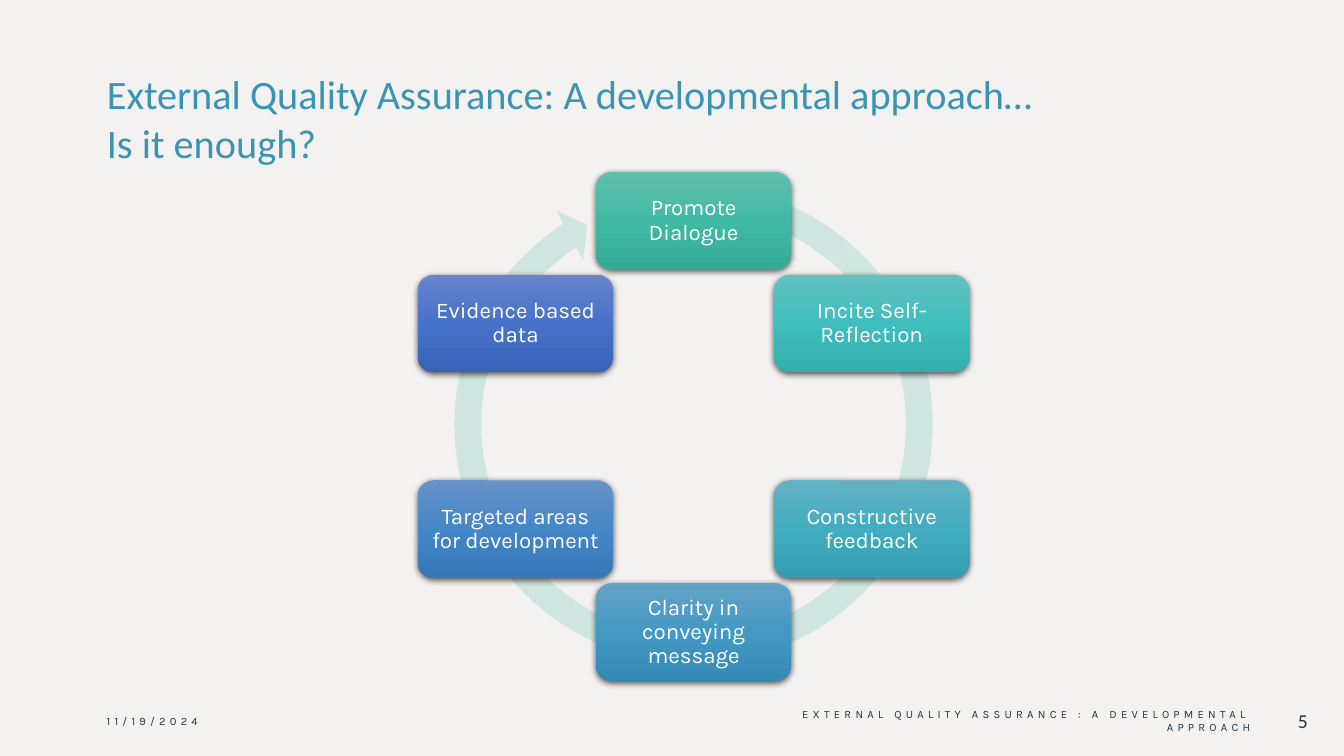
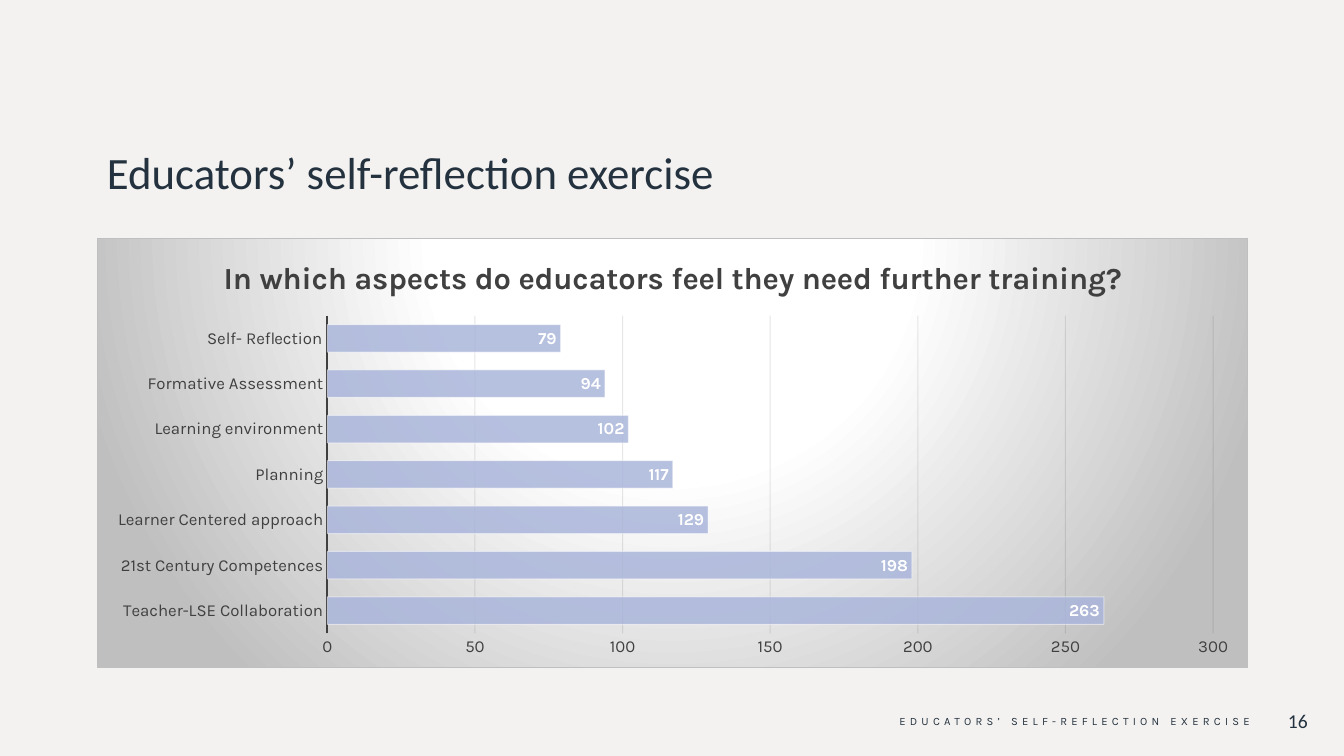
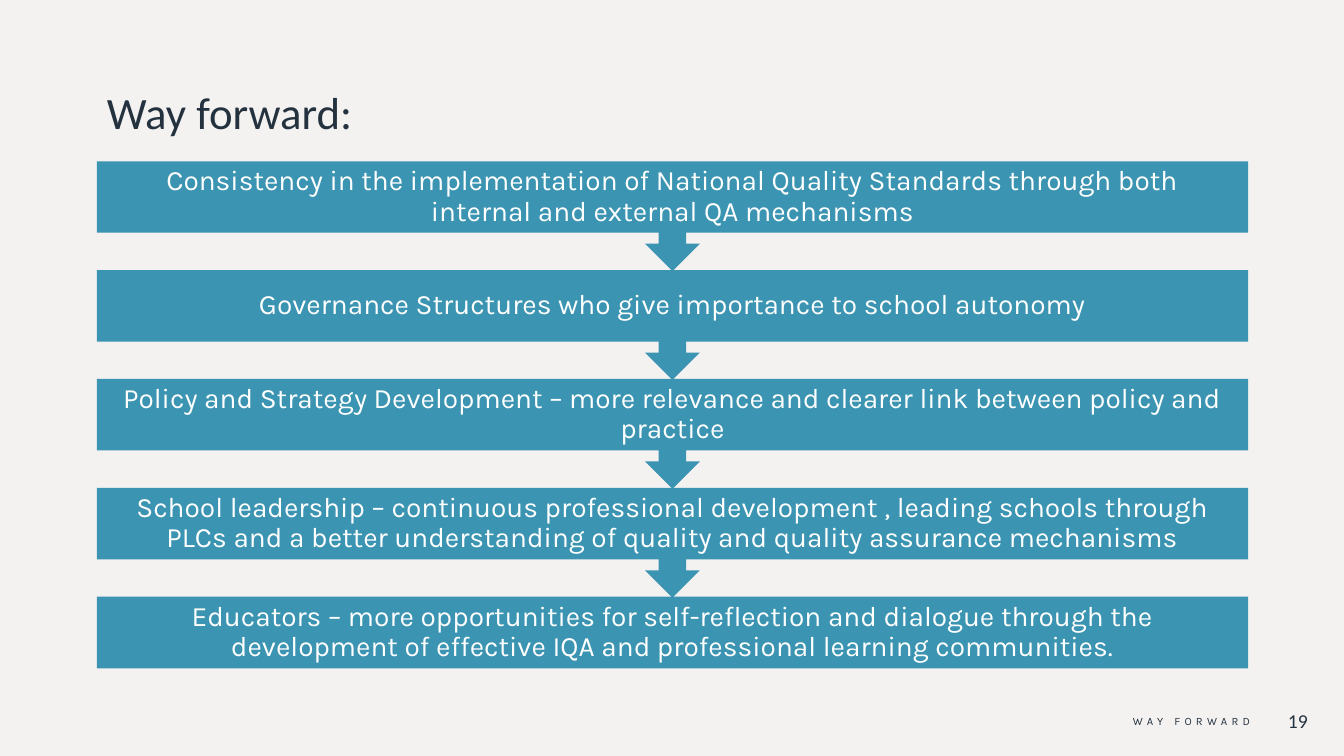
"""Build three slides on external quality assurance, self-reflection and the way forward."""
import math

from pptx import Presentation
from pptx import util as u
from pptx.chart.data import CategoryChartData
from pptx.dml.color import RGBColor
from pptx.enum import chart as charts, shapes, text
from pptx.oxml import parse_xml
from pptx.oxml.ns import nsdecls, qn
from pptx.util import Inches

BACKGROUND = RGBColor(0xF4, 0xF2, 0xF1)
INK = RGBColor(0x23, 0x32, 0x3E)
TEAL = RGBColor(0x3B, 0x94, 0xB1)
PALE_GREEN = RGBColor(0xCF, 0xE5, 0xE0)
WHITE = RGBColor(0xFF, 0xFF, 0xFF)
CHART_TEXT = RGBColor(0x40, 0x40, 0x40)
CHART_EDGE = RGBColor(0xBF, 0xBF, 0xBF)
GRID = RGBColor(0x0D, 0x0D, 0x0D)
BAR = RGBColor(0xAA, 0xB5, 0xDA)
HEADING_FONT, BODY_FONT = "Calibri", "Karla"

LEFT, WIDTH = 0.96, 11.42
TITLE_TOP = 0.64

CYCLE_STEPS = [
    ("Promote Dialogue", "61BEAC", "40BAA5", "34AA95"),
    ("Incite Self-Reflection", "62C1C0", "40BEBE", "34AEAE"),
    ("Constructive feedback", "63B2C3", "42ACC1", "349DB2"),
    ("Clarity in conveying message", "64A2C6", "4399C4", "358AB5"),
    ("Targeted areas for development", "6693C8", "4586C6", "3777B7"),
    ("Evidence based data", "6784CA", "4772C9", "3963B9"),
]
CYCLE_CENTER, CYCLE_RADIUS = (6.88, 4.23), 2.04
STEP_WIDTH, STEP_HEIGHT = 1.94, 0.97
RING_SIZE = 5.03
RING_THICKNESS, RING_HEAD = 5.27, 5.48
RING_HEAD_ANGLE, RING_END, RING_START = 5.21, 236.76, 285.67

CHART_TITLE = "In which aspects do educators feel they need further training?"
TRAINING_NEEDS = [
    ("Teacher-LSE Collaboration", 263),
    ("21st Century Competences", 198),
    ("Learner Centered approach", 129),
    ("Planning", 117),
    ("Learning environment", 102),
    ("Formative Assessment", 94),
    ("Self- Reflection", 79),
]
PLOT_LAYOUT = {"x": 0.2, "y": 0.18, "w": 0.77, "h": 0.74}

PRIORITIES = [
    "Consistency in the implementation of National Quality Standards through both "
    "internal and external QA mechanisms",
    "Governance Structures who give importance to school autonomy",
    "Policy and Strategy Development – more relevance and clearer link between policy and practice",
    "School leadership – continuous professional development , leading schools through PLCs "
    "and a better understanding of quality and quality assurance mechanisms",
    "Educators – more opportunities for self-reflection and dialogue through the development "
    "of effective IQA and professional learning communities.",
]
PRIORITY_TOP, PRIORITY_STEP = 1.6, 1.08
CALLOUT_HEIGHT, BAND_HEIGHT = 1.09, 0.71


def box(left, top, width, height):
    return Inches(left), Inches(top), Inches(width), Inches(height)


def style_font(font, name, size, color, bold=False):
    font.name, font.size, font.bold = name, u.Pt(size), bold
    font.color.rgb = color


def write(shape, content, name, size, color, align=text.PP_ALIGN.LEFT,
          anchor=text.MSO_ANCHOR.MIDDLE, line_spacing=1.0, spacing=0):
    frame = shape.text_frame
    frame.text = content
    frame.word_wrap = True
    frame.auto_size = text.MSO_AUTO_SIZE.NONE
    frame.vertical_anchor = anchor
    paragraph = frame.paragraphs[0]
    paragraph.alignment = align
    paragraph.line_spacing = line_spacing
    for run in paragraph.runs:
        style_font(run.font, name, size, color)
        if spacing:
            run.font._element.set("spc", str(spacing * 100))


def set_margins(shape, horizontal, vertical):
    frame = shape.text_frame
    frame.margin_left = frame.margin_right = Inches(horizontal)
    frame.margin_top = frame.margin_bottom = Inches(vertical)


def gradient_xml(stops, direction):
    stop_xml = "".join(
        f'<a:gs pos="{position * 1000}"><a:srgbClr val="{color}"/></a:gs>'
        for position, color in stops)
    return f'<a:gradFill {nsdecls("a")} rotWithShape="1"><a:gsLst>{stop_xml}</a:gsLst>{direction}</a:gradFill>'


def set_alpha(element, color, percent):
    for node in element.iter(qn("a:srgbClr")):
        if node.get("val") == str(color):
            node.append(parse_xml(f'<a:alpha {nsdecls("a")} val="{percent * 1000}"/>'))


def add_plain_shape(slide, kind, frame, color=None):
    shape = slide.shapes.add_shape(kind, *frame)
    shape.shadow.inherit = False
    shape.line.fill.background()
    if color is not None:
        shape.fill.solid()
        shape.fill.fore_color.rgb = color
    return shape


def add_slide(presentation, title, title_height, footer, number,
              title_size=32, title_color=INK, date=None):
    slide = presentation.slides.add_slide(presentation.slide_layouts[5])
    heading = slide.shapes.title
    heading.left, heading.top, heading.width, heading.height = box(
        LEFT, TITLE_TOP, WIDTH, title_height)
    write(heading, title, HEADING_FONT, title_size, title_color, anchor=text.MSO_ANCHOR.BOTTOM)
    right = text.PP_ALIGN.RIGHT
    footer_parts = [
        (date, LEFT, 3, BODY_FONT, 8, text.PP_ALIGN.LEFT, 3),
        (footer, 7.8, 4.7, BODY_FONT, 8, right, 3),
        (number, 12.5, 0.57, HEADING_FONT, 14, right, 0),
    ]
    for content, left, width, font, size, align, spacing in footer_parts:
        if content:
            label = slide.shapes.add_textbox(*box(left, 6.95, width, 0.4))
            write(label, content, font, size, INK, align, spacing=spacing)
    return slide


def add_cycle(slide):
    center_x, center_y = CYCLE_CENTER
    ring = add_plain_shape(
        slide, shapes.MSO_SHAPE.CIRCULAR_ARROW,
        box(center_x - RING_SIZE / 2, center_y - RING_SIZE / 2 - 0.02, RING_SIZE, RING_SIZE),
        PALE_GREEN)
    settings = [RING_THICKNESS / 100, RING_HEAD_ANGLE * 0.6, RING_END * 0.6,
                RING_START * 0.6, RING_HEAD / 100]
    for index, value in enumerate(settings):
        ring.adjustments[index] = value
    for index, (label, *colors) in enumerate(CYCLE_STEPS):
        angle = 2 * math.pi * index / len(CYCLE_STEPS)
        left = center_x + CYCLE_RADIUS * math.sin(angle) - STEP_WIDTH / 2
        top = center_y - CYCLE_RADIUS * math.cos(angle) - STEP_HEIGHT / 2
        step = add_plain_shape(slide, shapes.MSO_SHAPE.ROUNDED_RECTANGLE,
                               box(left, top, STEP_WIDTH, STEP_HEIGHT))
        properties = step._element.spPr
        stops = zip((0, 50, 100), map(RGBColor.from_string, colors))
        properties.find(qn("a:prstGeom")).addnext(
            parse_xml(gradient_xml(stops, '<a:lin ang="5400000" scaled="0"/>')))
        properties.find(qn("a:effectLst")).append(parse_xml(
            f'<a:outerShdw {nsdecls("a")} blurRad="{u.Pt(4.5)}" dist="{u.Pt(1.5)}" dir="5400000" '
            'algn="ctr" rotWithShape="0"><a:srgbClr val="000000"><a:alpha val="63000"/>'
            '</a:srgbClr></a:outerShdw>'))
        set_margins(step, 0.07, 0.07)
        write(step, label, BODY_FONT, 16, WHITE, text.PP_ALIGN.CENTER, line_spacing=0.9)


def add_training_chart(slide):
    data = CategoryChartData()
    data.categories = [name for name, _ in TRAINING_NEEDS]
    data.add_series("Series 1", [value for _, value in TRAINING_NEEDS])
    chart = slide.shapes.add_chart(
        charts.XL_CHART_TYPE.BAR_CLUSTERED, *box(LEFT, 2.36, WIDTH, 4.27), data).chart
    style_font(chart.font, BODY_FONT, 12, CHART_TEXT)
    chart.has_legend = False
    chart.has_title = True
    chart.chart_title.text_frame.text = CHART_TITLE
    title_run = chart.chart_title.text_frame.paragraphs[0].runs[0]
    style_font(title_run.font, BODY_FONT, 22, CHART_TEXT, bold=True)

    for axis in (chart.category_axis, chart.value_axis):
        axis.major_tick_mark = axis.minor_tick_mark = charts.XL_TICK_MARK.NONE
        style_font(axis.tick_labels.font, BODY_FONT, 12, CHART_TEXT)
    chart.category_axis.format.line.color.rgb = CHART_TEXT
    chart.category_axis.format.line.width = u.Pt(1.5)
    values = chart.value_axis
    values.minimum_scale, values.maximum_scale, values.major_unit = 0, 300, 50
    values.format.line.fill.background()
    values.major_gridlines.format.line.color.rgb = GRID
    values.major_gridlines.format.line.width = u.Pt(0.75)

    plot = chart.plots[0]
    plot.gap_width = 65
    plot.vary_by_categories = False
    series = plot.series[0]
    series.format.fill.solid()
    series.format.fill.fore_color.rgb = BAR
    series.format.line.color.rgb = WHITE
    series.format.line.width = u.Pt(0.75)
    space = chart._chartSpace
    for color, percent in ((BAR, 85), (WHITE, 50), (GRID, 10)):
        set_alpha(space, color, percent)
    labels = series.data_labels
    labels.show_value = True
    labels.position = charts.XL_LABEL_POSITION.INSIDE_END
    style_font(labels.font, BODY_FONT, 12, WHITE, bold=True)

    area = space.find(qn("c:chart")).find(qn("c:plotArea"))
    for layout in area.findall(qn("c:layout")):
        area.remove(layout)
    sizes = "".join(f'<c:{key} val="{value}"/>' for key, value in PLOT_LAYOUT.items())
    area.insert(0, parse_xml(
        f'<c:layout {nsdecls("c")}><c:manualLayout><c:layoutTarget val="inner"/>'
        f'<c:xMode val="edge"/><c:yMode val="edge"/>{sizes}</c:manualLayout></c:layout>'))
    fill = gradient_xml(
        [(0, WHITE), (39, WHITE), (100, CHART_EDGE)],
        '<a:path path="circle"><a:fillToRect l="50000" t="-80000" r="50000" b="180000"/></a:path>')
    space.find(qn("c:txPr")).addprevious(parse_xml(
        f'<c:spPr {nsdecls("c", "a")}>{fill}<a:ln w="{u.Pt(0.75)}"><a:solidFill>'
        f'<a:srgbClr val="{CHART_EDGE}"/></a:solidFill></a:ln></c:spPr>'))


def add_priorities(slide):
    for index, priority in enumerate(PRIORITIES):
        is_last = index == len(PRIORITIES) - 1
        kind = shapes.MSO_SHAPE.RECTANGLE if is_last else shapes.MSO_SHAPE.DOWN_ARROW_CALLOUT
        height = BAND_HEIGHT if is_last else CALLOUT_HEIGHT
        band = add_plain_shape(
            slide, kind, box(LEFT, PRIORITY_TOP + index * PRIORITY_STEP, WIDTH, height), TEAL)
        set_margins(band, 0.16, 0)
        write(band, priority, BODY_FONT, 20, WHITE, text.PP_ALIGN.CENTER, line_spacing=0.9)


def main():
    presentation = Presentation()
    presentation.slide_width, presentation.slide_height = Inches(13.33), Inches(7.5)
    background = presentation.slide_master.background.fill
    background.solid()
    background.fore_color.rgb = BACKGROUND

    add_cycle(add_slide(
        presentation, "External Quality Assurance: A developmental approach…\vIs it enough?", 1.06,
        "EXTERNAL QUALITY ASSURANCE : A DEVELOPMENTAL APPROACH", "5",
        title_size=28.8, title_color=TEAL, date="11/19/2024"))
    add_training_chart(add_slide(
        presentation, "Educators’ self-reflection exercise", 1.38,
        "EDUCATORS’ SELF-REFLECTION EXERCISE", "16"))
    add_priorities(add_slide(presentation, "Way forward:", 0.78, "WAY FORWARD", "19"))
    presentation.save("out.pptx")


if __name__ == "__main__":
    main()
